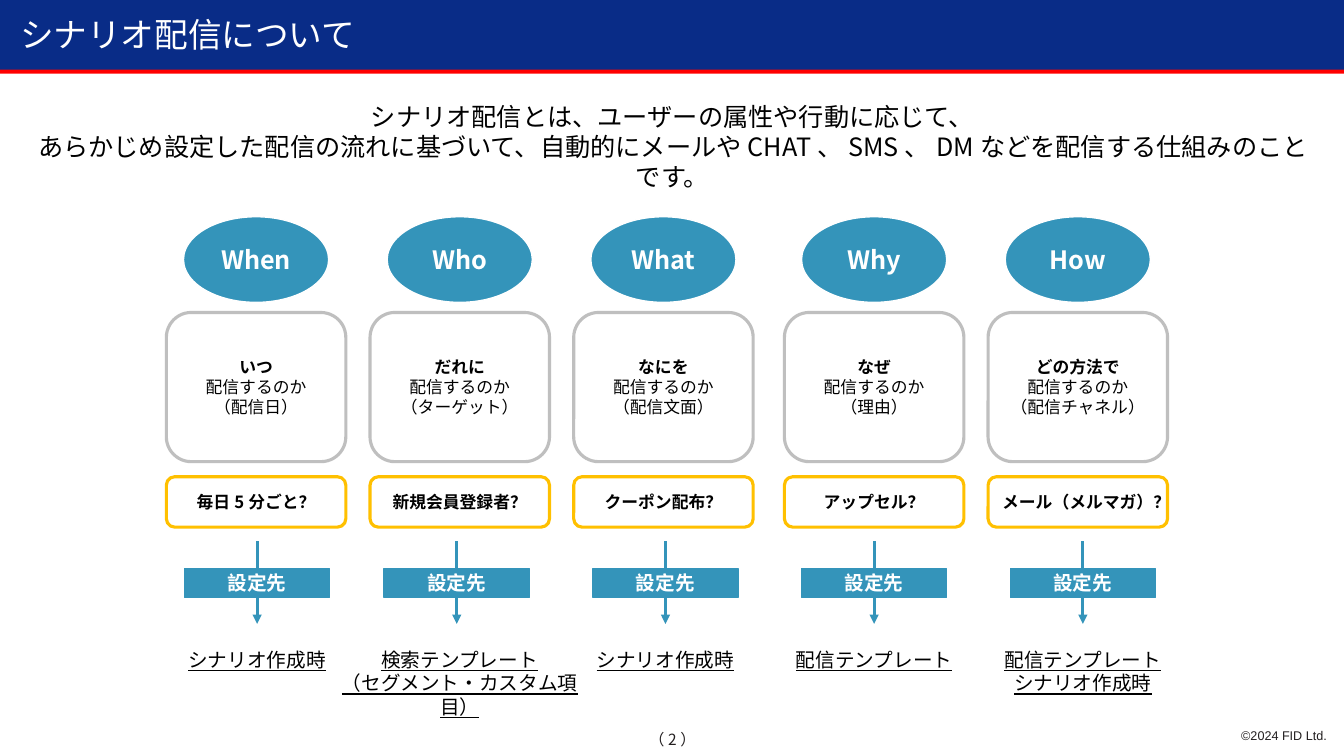
from lxml import etree
from pptx import Presentation
from pptx import util as u
from pptx.dml.color import RGBColor
from pptx.enum import shapes, text
from pptx.oxml.ns import qn

TITLE = "シナリオ配信について"
LEAD = [
    "シナリオ配信とは、ユーザーの属性や行動に応じて、",
    "あらかじめ設定した配信の流れに基づいて、自動的にメールやCHAT、SMS、DMなどを配信する仕組みのことです。",
]
ACTION = "配信するのか"
SETTING = "設定先"
QUESTIONS = [
    ("When", "いつ", "（配信日）", "毎日5分ごと？", ["シナリオ作成時"]),
    ("Who", "だれに", "（ターゲット）", "新規会員登録者？",
     ["検索テンプレート", "（セグメント・カスタム項目）"]),
    ("What", "なにを", "（配信文面）", "クーポン配布？", ["シナリオ作成時"]),
    ("Why", "なぜ", "（理由）", "アップセル？", ["配信テンプレート"]),
    ("How", "どの方法で", "（配信チャネル）", "メール（メルマガ）？",
     ["配信テンプレート", "シナリオ作成時"]),
]
PAGE = "（2）"
COPYRIGHT = "©2024 FID Ltd."

THEME = {
    "font": "Noto Sans CJK JP", "small_font": "Arial", "leading": 1.19,
    "navy": "092C87", "red": "FF0000", "teal": "3494BA", "gray": "BFBFBF",
    "amber": "FFC000", "white": "FFFFFF", "black": "000000", "ink": "231F20",
    "title": 24, "lead": 18, "label": 14, "body": 12, "page": 11, "small": 9,
}
WIDTH, HEIGHT = 13.33, 7.5
ROWS = {"word": (2.15, 0.85), "meaning": (3.1, 1.48), "example": (4.73, 0.5),
        "arrow": (5.37, 0.82), "setting": (5.64, 0.29), "place": (6.38, 0.34)}
CARD_W, BADGE_W, PLACE_W, WIDE_PLACE_W = 1.78, 1.44, 2.46, 2.6
FIRST_X, CARD_PITCH, CARD_GAP = 2.54, 2.02, 0.07
SECOND_ARROW_X, ARROW_PITCH, FIRST_ARROW_X = 4.53, 2.07, 2.55

deck = Presentation()
deck.slide_width, deck.slide_height = u.Inches(WIDTH), u.Inches(HEIGHT)
slide = deck.slides.add_slide(deck.slide_layouts[6])


def color(name):
    return RGBColor.from_string(THEME[name])


def write(part, lines, size, ink="black", align="CENTER", anchor="TOP",
          font="font", leading=None, insets=(0.1, 0.05, 0.1, 0.05), bold_lines=0, **style):
    frame = part.text_frame
    left, top, right, bottom = map(u.Inches, insets)
    frame_format = {"word_wrap": True, "vertical_anchor": text.MSO_ANCHOR[anchor],
                    "margin_left": left, "margin_top": top,
                    "margin_right": right, "margin_bottom": bottom}
    for key, value in frame_format.items():
        setattr(frame, key, value)
    for index, line in enumerate(lines):
        paragraph = frame.paragraphs[0] if index == 0 else frame.add_paragraph()
        paragraph.alignment = text.PP_ALIGN[align]
        paragraph.line_spacing = u.Pt(leading or round(THEME[size] * THEME["leading"], 1))
        run = paragraph.add_run()
        run.text = line
        font_format = {"size": u.Pt(THEME[size]), "name": THEME[font],
                       "bold": index < bold_lines, **style}
        for key, value in font_format.items():
            setattr(run.font, key, value)
        run.font.color.rgb = color(ink)
        latin = run.font._element.find(qn("a:latin"))
        east_asian = etree.Element(qn("a:ea"), typeface=THEME[font])
        latin.addnext(east_asian)


def label(x, y, w, h, lines, size, **style):
    write(slide.shapes.add_textbox(*map(u.Inches, (x, y, w, h))), lines, size, **style)


def block(kind, x, y, w, h, fill, line=None, line_width=1.0):
    part = slide.shapes.add_shape(shapes.MSO_SHAPE[kind], *map(u.Inches, (x, y, w, h)))
    part.shadow.inherit = False
    part.fill.solid()
    part.fill.fore_color.rgb = color(fill)
    if line:
        part.line.color.rgb = color(line)
        part.line.width = u.Pt(line_width)
    else:
        part.line.fill.background()
    return part


def cell(kind, center, row, width, fill, line, line_width, lines, size, **style):
    top, height = ROWS[row]
    part = block(kind, center - width / 2, top, width, height, fill, line, line_width)
    write(part, lines, size, anchor="MIDDLE", **style)


def down_arrow(x):
    top, height = ROWS["arrow"]
    arrow = slide.shapes.add_connector(
        shapes.MSO_CONNECTOR.STRAIGHT, *map(u.Inches, (x, top, x, top + height)))
    arrow.line.color.rgb = color("teal")
    arrow.line.width = u.Pt(2.25)
    etree.SubElement(arrow.line._get_or_add_ln(), qn("a:tailEnd"), type="triangle")
    etree.SubElement(arrow._element.spPr, qn("a:effectLst"))


block("RECTANGLE", 0, 0, WIDTH, 0.7, "navy")
block("RECTANGLE", 0, 0.69, WIDTH, 0.04, "red")
label(0.1, 0.09, 9.45, 0.5, [TITLE], "title", ink="white", align="LEFT")
write(block("RECTANGLE", 0.2, 0.96, 12.94, 0.71, "white"), LEAD, "lead")

for column, (word, subject, detail, example, places) in enumerate(QUESTIONS):
    card_x = FIRST_X + column * CARD_PITCH + (CARD_GAP if column > 2 else 0)
    arrow_x = SECOND_ARROW_X + (column - 1) * ARROW_PITCH if column else FIRST_ARROW_X
    place_w = WIDE_PLACE_W if column == 1 else PLACE_W
    place_x = card_x if column == 1 else arrow_x
    place_top, place_h = ROWS["place"]

    cell("OVAL", card_x, "word", BADGE_W, "teal", "white", 1,
         [word], "lead", ink="white", bold_lines=1)
    cell("ROUNDED_RECTANGLE", card_x, "meaning", CARD_W, "white", "gray", 2.25,
         [subject, ACTION, detail], "body", bold_lines=1)
    cell("ROUNDED_RECTANGLE", card_x, "example", CARD_W, "white", "amber", 2.25,
         [example], "body", bold_lines=1)
    down_arrow(arrow_x)
    cell("RECTANGLE", arrow_x, "setting", BADGE_W, "teal", "teal", 1,
         [SETTING], "label", ink="white", bold_lines=1)
    label(place_x - place_w / 2, place_top, place_w, place_h * len(places),
          places, "label", underline=True)

label(5.86, 7.21, 1.62, 0.23, [PAGE], "page", ink="ink", insets=(0, 0.04, 0, 0))
label(10.31, 7.26, 2.85, 0.11, [COPYRIGHT], "small", ink="ink", align="RIGHT",
      font="small_font", leading=7.7, insets=(0, 0, 0, 0))

deck.save("out.pptx")
